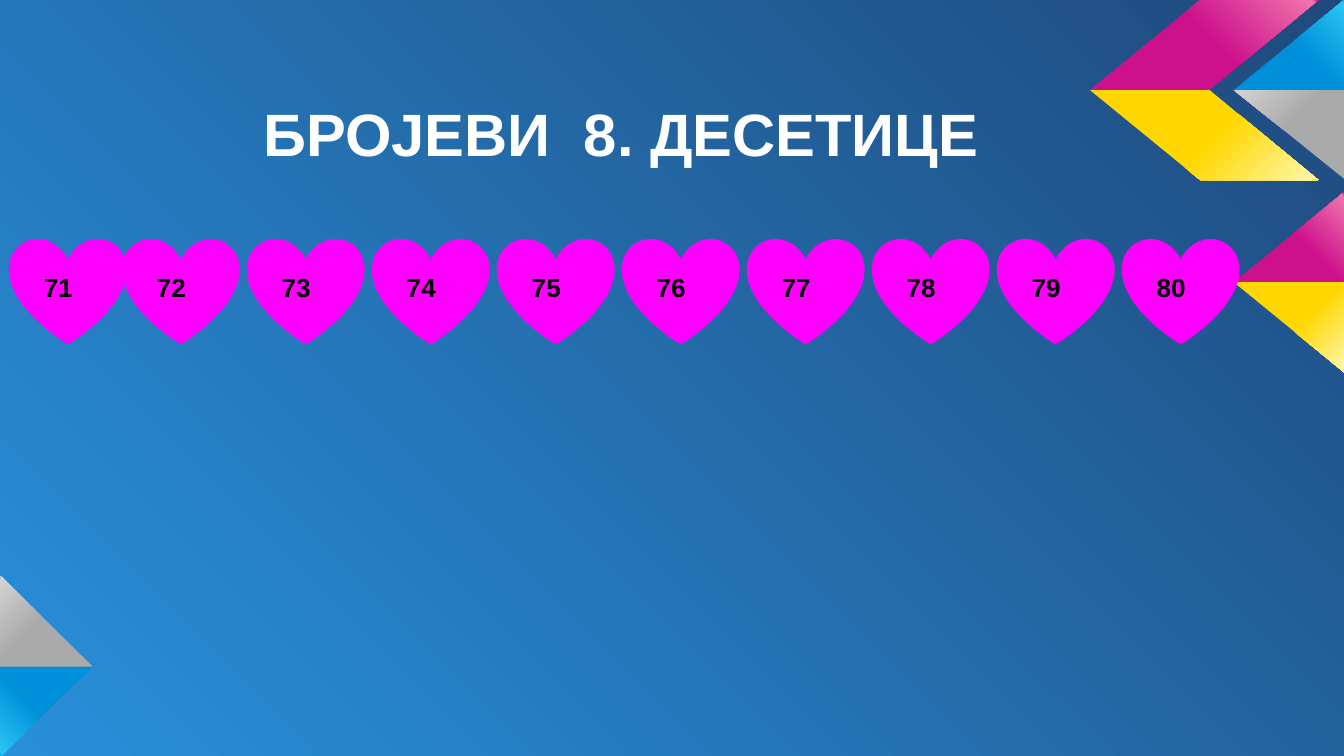
from lxml import etree
from pptx import Presentation
from pptx.dml.color import RGBColor
from pptx.enum.shapes import MSO_SHAPE
from pptx.enum.text import MSO_ANCHOR, PP_ALIGN
from pptx.oxml.ns import qn
from pptx.util import Inches, Pt

HEART = MSO_SHAPE.HEART
LEFT = PP_ALIGN.LEFT
TOP, MIDDLE = MSO_ANCHOR.TOP, MSO_ANCHOR.MIDDLE

WIDTH = 10
HEIGHT = WIDTH * 9 / 16
TITLE = "БРОЈЕВИ  8. ДЕСЕТИЦЕ"
NUMBERS = range(71, 81)
HEART_WIDTH, HEART_HEIGHT, HEART_TOP = 0.83, 0.75, 1.79
HEART_STEP, FIRST_LEFT, SECOND_LEFT = 0.93, 0.09, 0.93

BACKGROUND = [(0, "2890DA"), (100, "1F497D")]
# base colour, highlight, edge colour
BLUE = ("0090DA", "2BC4F3", "00AEEE")
GRAY = ("AAAAAA", "D2D2D2", "B9B9B9")
PINK = ("CD118C", "F074AC", "EB008B")
YELLOW = ("FFD700", "FFF7A9", "FFF100")

# colours, gradient angle, corners
RIBBONS = [
    (BLUE, 135, [(0.69, 4.96), (0, 4.96), (0, HEIGHT), (0.01, HEIGHT)]),
    (GRAY, 225, [(0.69, 4.96), (0.01, 4.29), (0, 4.29), (0, 4.96)]),
    (BLUE, 315, [(10, 0), (9.18, 0.67), (10, 0.67)]),
    (GRAY, 225, [(9.18, 0.67), (10, 1.33), (10, 0.67)]),
    (PINK, 315, [(9, 0.67), (9.81, 0), (8.93, 0), (8.11, 0.67)]),
    (PINK, 315, [(10, 1.43), (9.18, 2.1), (10, 2.1)]),
    (YELLOW, 45, [(9.18, 2.1), (10, 2.77), (10, 2.1)]),
    (YELLOW, 45, [(9, 0.67), (9.81, 1.34), (8.93, 1.34), (8.11, 0.67)]),
]


def color(value):
    return RGBColor.from_string(value)


def set_gradient(fill, owner, stops, angle=None):
    """Fill with stops, linear at the angle or else radial from bottom left."""
    fill.gradient()
    gradient = owner.find(".//" + qn("a:gradFill"))
    gradient.clear()
    stop_list = etree.SubElement(gradient, qn("a:gsLst"))
    for percent, value in stops:
        stop = etree.SubElement(stop_list, qn("a:gs"), pos=str(percent * 1000))
        etree.SubElement(stop, qn("a:srgbClr"), val=value)
    if angle is None:
        radial = etree.SubElement(gradient, qn("a:path"), path="circle")
        etree.SubElement(radial, qn("a:fillToRect"), t="100000", r="100000")
    else:
        etree.SubElement(gradient, qn("a:lin"), ang=str(angle * 60000), scaled="0")


def add_ribbon(slide, colors, angle, corners):
    points = [(Inches(x), Inches(y)) for x, y in corners]
    builder = slide.shapes.build_freeform(*points[0])
    builder.add_line_segments(points[1:], close=True)
    ribbon = builder.convert_to_shape()
    ribbon.shadow.inherit = False
    ribbon.line.fill.background()
    base, highlight, edge = colors
    stops = [(0, base), (54, base), (98, highlight), (100, edge)]
    set_gradient(ribbon.fill, ribbon._element.spPr, stops, angle)


def write(shape, text, size, text_color, anchor):
    frame = shape.text_frame
    frame.word_wrap = True
    frame.vertical_anchor = anchor
    frame.margin_left = frame.margin_right = Inches(0.1)
    frame.margin_top = frame.margin_bottom = Inches(0.1)
    para = frame.paragraphs[0]
    para.text = text
    para.alignment = LEFT
    para.font.name = "Arial"
    para.font.size = Pt(size)
    para.font.bold = True
    para.font.color.rgb = color(text_color)


def add_heart(slide, number, left):
    heart = slide.shapes.add_shape(
        HEART, Inches(left), Inches(HEART_TOP), Inches(HEART_WIDTH), Inches(HEART_HEIGHT))
    heart.shadow.inherit = False
    heart.fill.solid()
    heart.fill.fore_color.rgb = color("FF00FF")
    heart.line.color.rgb = color("FF00FF")
    heart.line.width = Pt(3)
    write(heart, str(number), 14, "000000", MIDDLE)


def main():
    deck = Presentation()
    deck.slide_width, deck.slide_height = Inches(WIDTH), Inches(HEIGHT)
    slide = deck.slides.add_slide(deck.slide_layouts[6])
    set_gradient(slide.background.fill, slide._element, BACKGROUND)

    for colors, angle, corners in RIBBONS:
        add_ribbon(slide, colors, angle, corners)

    title = slide.shapes.add_textbox(Inches(1.86), Inches(0.62), Inches(6.2), Inches(0.7))
    write(title, TITLE, 32, "FFFFFF", TOP)

    for index, number in enumerate(NUMBERS):
        left = SECOND_LEFT + (index - 1) * HEART_STEP if index else FIRST_LEFT
        add_heart(slide, number, left)

    deck.save("out.pptx")


if __name__ == "__main__":
    main()
